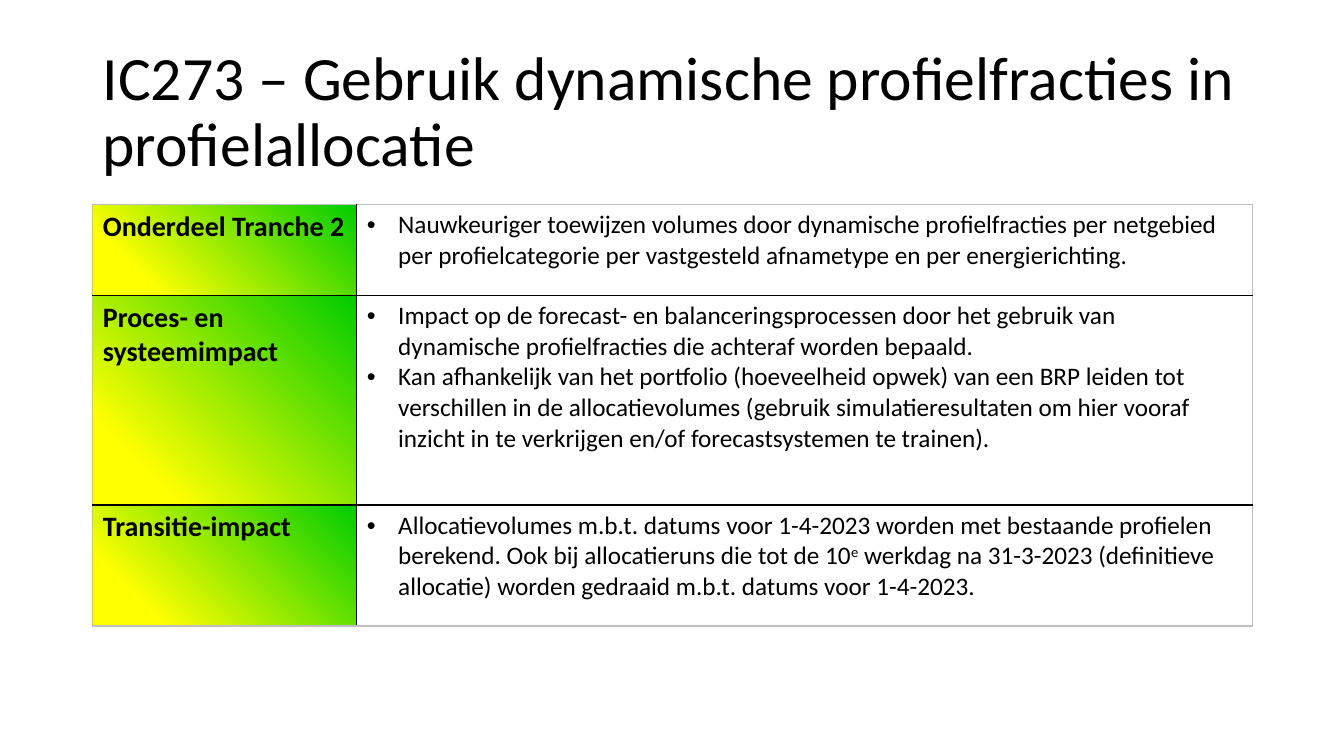
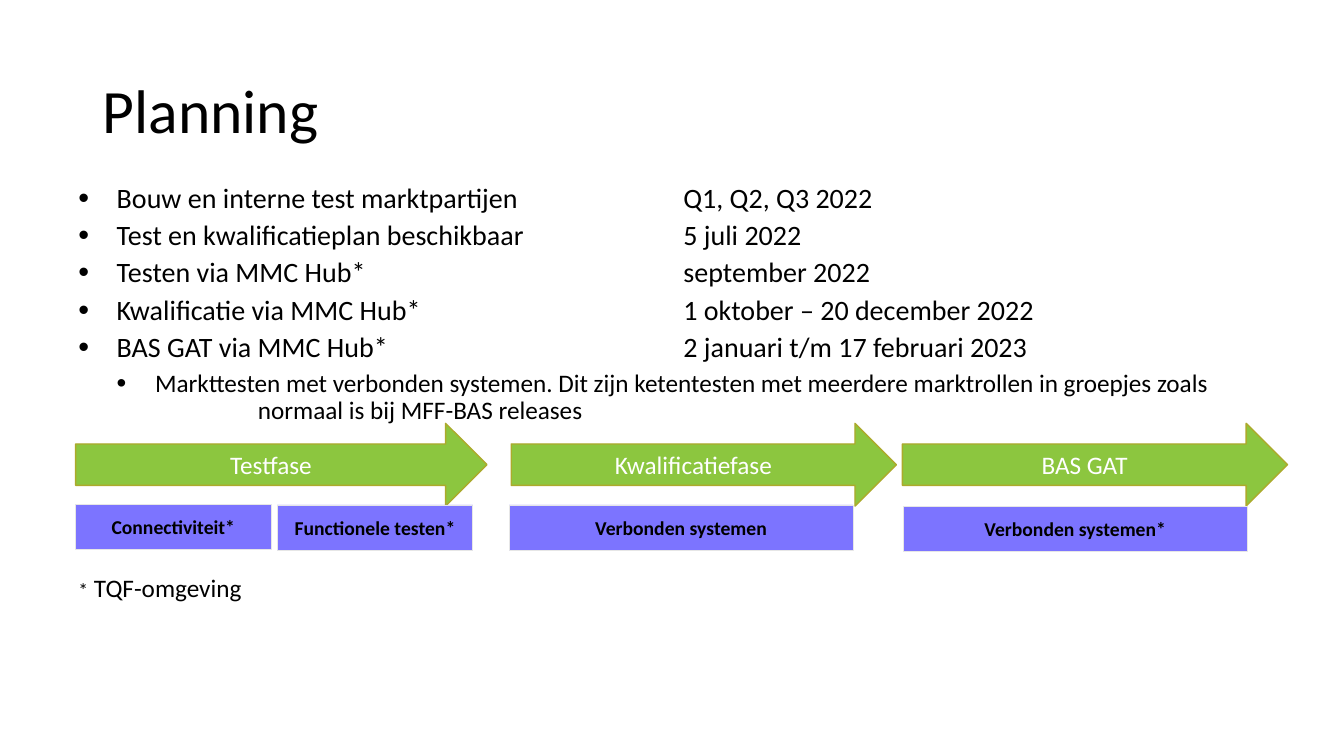
from lxml import etree
from pptx import Presentation
from pptx.dml.color import RGBColor
from pptx.enum import shapes, text
from pptx.oxml import ns
from pptx.util import Inches, Pt

# Shared look
HUE = dict(ink="000000", white="FFFFFF", green="00CC00", yellow="FFFF00",
           arrow="8CC63F", rim="ACAA2C", box="7C74FF", pale="E6E6E6", grey="BFBFBF")
FONT = "Calibri"
TITLE = (0.92, 0.4, 11.5, 1.45)
MID, TOP = text.MSO_ANCHOR.MIDDLE, text.MSO_ANCHOR.TOP

# Slide 1: label, bullets (a bullet is text, or a list of text and format pairs)
HEAD = "IC273 – Gebruik dynamische profielfracties in profielallocatie"
COLS = (2.62, 8.88)
ROWS = [
    (0.9, "Onderdeel Tranche 2", [
        "Nauwkeuriger toewijzen volumes door dynamische profielfracties per netgebied "
        "per profielcategorie per vastgesteld afnametype en per energierichting."]),
    (2.08, "Proces- en systeemimpact", [
        "Impact op de forecast- en balanceringsprocessen door het gebruik van "
        "dynamische profielfracties die achteraf worden bepaald.",
        "Kan afhankelijk van het portfolio (hoeveelheid opwek) van een BRP leiden tot "
        "verschillen in de allocatievolumes (gebruik simulatieresultaten om hier vooraf "
        "inzicht in te verkrijgen en/of forecastsystemen te trainen)."]),
    (1.2, "Transitie-impact", [[
        ("Allocatievolumes m.b.t. datums voor 1-4-2023 worden met bestaande profielen "
         "berekend. Ook bij allocatieruns die tot de 10", {}),
        ("e", {"base": 30}),
        (" werkdag na 31-3-2023 (definitieve allocatie) worden gedraaid m.b.t. datums "
         "voor 1-4-2023.", {})]]),
]

# Slide 2: steps with dates, a detail below, phases and their parts
PLAN = "Planning"
STEPS = [
    ("Bouw en interne test marktpartijen", "Q1, Q2, Q3 2022"),
    ("Test en kwalificatieplan beschikbaar", "5 juli 2022"),
    ("Testen via MMC Hub*", "september 2022"),
    ("Kwalificatie via MMC Hub*", "1 oktober – 20 december 2022"),
    ("BAS GAT via MMC Hub*", "2 januari t/m 17 februari 2023"),
]
DETAIL = ("Markttesten met verbonden systemen. Dit zijn ketentesten met meerdere "
          "marktrollen in groepjes zoals")
REST = "normaal is bij MFF-BAS releases"
PHASES = [("Testfase", 0.75, 4.08), ("Kwalificatiefase", 5.07, 3.82), ("BAS GAT", 8.95, 3.82)]
PARTS = [("Connectiviteit*", 0.75, 5, 1.94), ("Functionele testen*", 2.75, 5.01, 1.94),
         ("Verbonden systemen", 5.05, 5.01, 3.41), ("Verbonden systemen*", 8.96, 5.02, 3.41)]
NOTE = [("*", {"size": 14}), (" TQF-omgeving", {})]


def rgb(name):
    return RGBColor.from_string(HUE[name])


def sub(node, tag, **attrs):
    return etree.SubElement(node, ns.qn("a:" + tag), attrs)


def write(frame, body, new=False, size=18, bold=False, hue="ink", align=None, gap=0,
          line=None, left=0, hang=0, mark=None, tab=None):
    """Write one paragraph; body is text or a list of (text, format) runs."""
    para = frame.add_paragraph() if new else frame.paragraphs[0]
    para.alignment, para.line_spacing = align, line
    para.space_before = Pt(gap)
    prop = para._p.get_or_add_pPr()
    prop.set("marL", str(Inches(left)))
    prop.set("indent", str(-Inches(hang)))
    if mark:
        sub(sub(prop, "buClr"), "srgbClr", val=HUE["ink"])
        sub(prop, "buSzPct", val=str(mark * 1000))
        sub(prop, "buFont", typeface="Arial")
        sub(prop, "buChar", char="•")
    else:
        sub(prop, "buNone")
    if tab:
        sub(sub(prop, "tabLst"), "tab", pos=str(Inches(tab)), algn="l")
    for words, form in [(body, {})] if isinstance(body, str) else body:
        run = para.add_run()
        run.text = words
        font = run.font
        font.name, font.size, font.bold = FONT, Pt(form.get("size", size)), bold
        font.color.rgb = rgb(hue)
        if "base" in form:
            run._r.get_or_add_rPr().set("baseline", str(form["base"] * 1000))


def area(slide, spot, anchor=TOP):
    frame = slide.shapes.add_textbox(*map(Inches, spot)).text_frame
    frame.word_wrap, frame.vertical_anchor = True, anchor
    return frame


def start(deck, title):
    slide = deck.slides.add_slide(deck.slide_layouts[6])
    write(area(slide, TITLE, MID), title, size=44, line=0.9)
    return slide


def block(slide, kind, spot, words, fill, rim, width, **form):
    shape = slide.shapes.add_shape(kind, *map(Inches, spot))
    shape.shadow.inherit = False
    shape.fill.solid()
    shape.fill.fore_color.rgb = rgb(fill)
    shape.line.color.rgb, shape.line.width = rgb(rim), Pt(width)
    shape.text_frame.vertical_anchor = MID
    write(shape.text_frame, words, align=text.PP_ALIGN.CENTER, **form)


def border(cell, hues):
    prop = cell._tc.get_or_add_tcPr()
    for n, (side, hue) in enumerate(zip("LRTB", hues)):
        edge = etree.Element(ns.qn("a:ln" + side), w=str(Pt(1)))
        sub(sub(edge, "solidFill"), "srgbClr", val=HUE[hue])
        prop.insert(n, edge)


def impact(deck):
    slide = start(deck, HEAD)
    spot = (0.92, 2.03, sum(COLS), sum(row[0] for row in ROWS))
    table = slide.shapes.add_table(len(ROWS), len(COLS), *map(Inches, spot)).table
    table.first_row = table.horz_banding = False
    for col, width in zip(table.columns, COLS):
        col.width = Inches(width)
    for r, (high, label, points) in enumerate(ROWS):
        table.rows[r].height = Inches(high)
        name, info = table.cell(r, 0), table.cell(r, 1)
        # Green at top right fades to yellow at bottom left
        name.fill.gradient()
        name.fill.gradient_angle = 225
        for stop, hue, pos in zip(name.fill.gradient_stops, ("green", "yellow"), (0, 0.81)):
            stop.color.rgb, stop.position = rgb(hue), pos
        info.fill.background()
        write(name.text_frame, label, size=20, bold=True)
        for n, point in enumerate(points):
            write(info.text_frame, point, new=n > 0, left=0.31, hang=0.31, mark=100)
        # Grey outside, black inside
        ends = ("grey" if r == 0 else "ink", "grey" if r == len(ROWS) - 1 else "ink")
        border(name, ("grey", "ink") + ends)
        border(info, ("ink", "grey") + ends)


def planning(deck):
    slide = start(deck, PLAN)
    body = area(slide, (0.68, 1.78, 11.5, 2.4))
    for n, step in enumerate(STEPS):
        write(body, "\t".join(step), new=n > 0, size=20, gap=5 if n else 0, line=0.9,
              left=0.38, hang=0.38, mark=110, tab=6)
    write(body, DETAIL, new=True, gap=5, line=0.9, left=0.76, hang=0.38, mark=110)
    write(body, REST, new=True, line=0.9, left=1.78)
    # Phase arrows, parts below them, footnote
    for words, left, width in PHASES:
        block(slide, shapes.MSO_SHAPE.RIGHT_ARROW, (left, 4.2, width, 0.82), words,
              "arrow", "rim", 1, hue="white")
    for words, left, top, width in PARTS:
        block(slide, shapes.MSO_SHAPE.RECTANGLE, (left, top, width, 0.45), words,
              "box", "pale", 0.5, size=14, bold=True)
    write(area(slide, (0.68, 5.63, 6.67, 0.4)), NOTE)


def main():
    deck = Presentation()
    deck.slide_width, deck.slide_height = Inches(13.33), Inches(7.5)
    impact(deck)
    planning(deck)
    deck.save("out.pptx")


if __name__ == "__main__":
    main()
